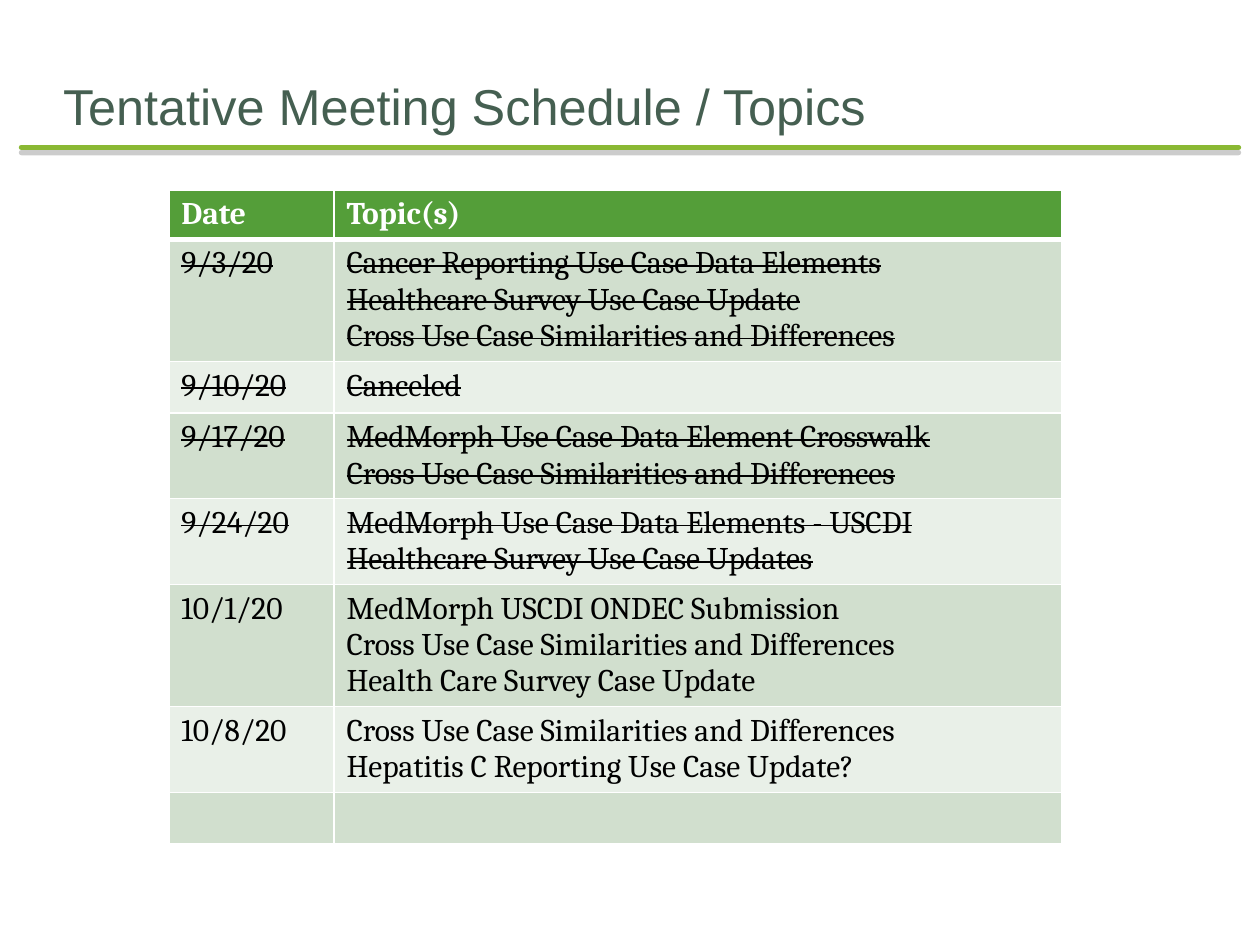
from lxml.etree import SubElement
from pptx import Presentation
from pptx.dml.color import RGBColor
from pptx.enum.shapes import MSO_CONNECTOR
from pptx.enum.text import MSO_ANCHOR, MSO_AUTO_SIZE, PP_ALIGN
from pptx.oxml import parse_xml
from pptx.oxml.ns import nsdecls, qn
from pptx.util import Inches, Pt

HEADER = ("Date", ["Topic(s)"])
MEETINGS = [
    ("9/3/20", ["Cancer Reporting Use Case Data Elements",
                "Healthcare Survey Use Case Update",
                "Cross Use Case Similarities and Differences"], True),
    ("9/10/20", ["Canceled"], True),
    ("9/17/20", ["MedMorph Use Case Data Element Crosswalk",
                 "Cross Use Case Similarities and Differences"], True),
    ("9/24/20", ["MedMorph Use Case Data Elements - USCDI",
                 "Healthcare Survey Use Case Updates"], True),
    ("10/1/20", ["MedMorph USCDI ONDEC Submission",
                 "Cross Use Case Similarities and Differences",
                 "Health Care Survey Case Update"], False),
    ("10/8/20", ["Cross Use Case Similarities and Differences",
                 "Hepatitis C Reporting Use Case Update?"], False),
    ("", [""], False),
]
COL_WIDTHS = [1.31, 5.78]
HEADER_HEIGHT = 0.38
ROW_HEIGHTS = {1: 0.41, 2: 0.68, 3: 0.97}
BANDS = ["D1DFCE", "E9F0E8"]


def rgb(value):
    """Return the colour for a hex string."""
    return RGBColor.from_string(value)


def style_run(r, size, font, color, bold=False, strike=False):
    """Format one run of text."""
    r.font.size = Pt(size)
    r.font.name = font
    r.font.bold = bold
    r.font.color.rgb = rgb(color)
    if strike:
        r.font._element.set("strike", "sngStrike")


def add_title(s, text):
    """Place and format the title placeholder."""
    sp = s.shapes.title
    sp.left, sp.top, sp.width, sp.height = map(Inches, (0.5, 0.5, 9, 0.58))
    tf = sp.text_frame
    tf.text = text
    tf.auto_size = MSO_AUTO_SIZE.NONE
    tf.vertical_anchor = MSO_ANCHOR.BOTTOM
    tf.margin_left = tf.margin_right = tf.margin_bottom = 0
    tf.margin_top = Inches(0.05)
    p = tf.paragraphs[0]
    p.alignment = PP_ALIGN.LEFT
    style_run(p.runs[0], 28.8, "Arial", "455F51")


def add_rule(s):
    """Draw the round-ended green rule with its grey shadow."""
    y = Inches(1.17)
    cxn = s.shapes.add_connector(
        MSO_CONNECTOR.STRAIGHT, Inches(0.17), y, Inches(9.83), y)
    cxn.line.color.rgb = rgb("8AB833")
    cxn.line.width = Pt(3)
    cxn.line._get_or_add_ln().set("cap", "rnd")
    cxn._element.spPr.append(parse_xml(
        f'<a:effectLst {nsdecls("a")}>'
        f'<a:outerShdw dist="{Pt(3)}" dir="5400000" rotWithShape="0">'
        '<a:srgbClr val="808080"><a:alpha val="40000"/></a:srgbClr>'
        '</a:outerShdw></a:effectLst>'))


def set_borders(cell, bottom):
    """Give a cell white borders, with its own bottom width."""
    tcPr = cell._tc.get_or_add_tcPr()
    for side, width in (("L", 1), ("R", 1), ("T", 1), ("B", bottom)):
        ln = SubElement(tcPr, qn(f"a:ln{side}"), w=str(Pt(width)))
        fill = SubElement(ln, qn("a:solidFill"))
        SubElement(fill, qn("a:srgbClr"), val="FFFFFF")


def fill_cell(cell, lines, fill, color, bold=False, strike=False, bottom=1):
    """Write the lines of a cell and format it."""
    set_borders(cell, bottom)
    cell.fill.solid()
    cell.fill.fore_color.rgb = rgb(fill)
    tf = cell.text_frame
    tf.text = "\n".join(lines)
    for p in tf.paragraphs:
        for r in p.runs:
            style_run(r, 18, "Cambria", color, bold, strike)


def add_schedule(s):
    """Build the table of meeting dates and topics."""
    heights = [HEADER_HEIGHT] + [ROW_HEIGHTS[len(m[1])] for m in MEETINGS]
    table = s.shapes.add_table(
        len(heights), len(COL_WIDTHS), Inches(1.34), Inches(1.51),
        Inches(sum(COL_WIDTHS)), Inches(sum(heights))).table
    for col, width in zip(table.columns, COL_WIDTHS):
        col.width = Inches(width)
    for row, height in zip(table.rows, heights):
        row.height = Inches(height)
    for c, lines in enumerate(([HEADER[0]], HEADER[1])):
        fill_cell(table.cell(0, c), lines, "549E39", "FFFFFF",
                  bold=True, bottom=3)
    for i, (date, topics, done) in enumerate(MEETINGS):
        for c, lines in enumerate(([date], topics)):
            fill_cell(table.cell(i + 1, c), lines, BANDS[i % 2], "000000",
                      strike=done)
            if i == 0:
                top = table.cell(1, c)._tc.tcPr.find(qn("a:lnT"))
                top.set("w", str(Pt(3)))


def main():
    """Build and save the slide."""
    prs = Presentation()
    prs.slide_width, prs.slide_height = Inches(10), Inches(7.5)
    s = prs.slides.add_slide(prs.slide_layouts[5])
    add_rule(s)
    add_title(s, "Tentative Meeting Schedule / Topics")
    add_schedule(s)
    prs.save("out.pptx")


if __name__ == "__main__":
    main()
